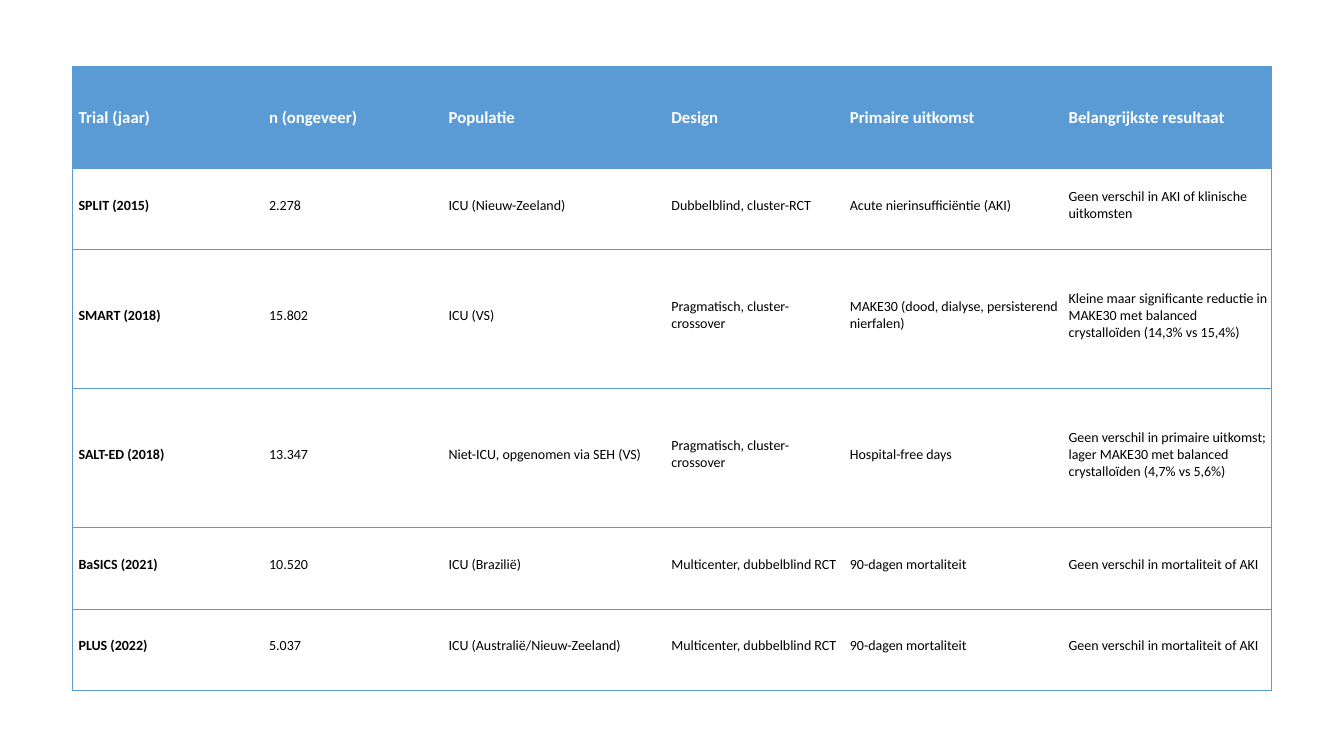
from lxml.etree import SubElement
from pptx import Presentation
from pptx.dml.color import RGBColor
from pptx.enum.text import MSO_ANCHOR
from pptx.oxml.ns import qn
from pptx.util import Inches, Pt

BLUE, WHITE, BLACK = "5B9BD5", "FFFFFF", "000000"
COLUMN_WIDTHS = [1.89, 1.78, 2.21, 1.77, 2.17, 2.07]
ROW_HEIGHTS = [1.01, 0.81, 1.38, 1.38, 0.81, 0.81]
TRIALS = [
    ["Trial (jaar)", "n (ongeveer)", "Populatie", "Design",
     "Primaire uitkomst", "Belangrijkste resultaat"],
    ["SPLIT (2015)", "2.278", "ICU (Nieuw-Zeeland)", "Dubbelblind, cluster-RCT",
     "Acute nierinsufficiëntie (AKI)",
     "Geen verschil in AKI of klinische uitkomsten"],
    ["SMART (2018)", "15.802", "ICU (VS)", "Pragmatisch, cluster-crossover",
     "MAKE30 (dood, dialyse, persisterend nierfalen)",
     "Kleine maar significante reductie in MAKE30 met balanced "
     "crystalloïden (14,3% vs 15,4%)"],
    ["SALT-ED (2018)", "13.347", "Niet-ICU, opgenomen via SEH (VS)",
     "Pragmatisch, cluster-crossover", "Hospital-free days",
     "Geen verschil in primaire uitkomst; lager MAKE30 met balanced "
     "crystalloïden (4,7% vs 5,6%)"],
    ["BaSICS (2021)", "10.520", "ICU (Brazilië)", "Multicenter, dubbelblind RCT",
     "90-dagen mortaliteit", "Geen verschil in mortaliteit of AKI"],
    ["PLUS (2022)", "5.037", "ICU (Australië/Nieuw-Zeeland)",
     "Multicenter, dubbelblind RCT", "90-dagen mortaliteit",
     "Geen verschil in mortaliteit of AKI"],
]


def color(value):
    """Turn a hex string into a colour."""
    return RGBColor.from_string(value)


def set_borders(cell, visible_sides):
    """Draw thin blue lines on the given sides and none on the others."""
    properties = cell._tc.get_or_add_tcPr()
    for side in "LRTB":
        line = SubElement(properties, qn(f"a:ln{side}"), w=str(Pt(0.5)))
        if side in visible_sides:
            fill = SubElement(line, qn("a:solidFill"))
            SubElement(fill, qn("a:srgbClr"), val=BLUE)
        else:
            SubElement(line, qn("a:noFill"))


def fill_cell(cell, text, is_header, is_bold):
    """Write and format the text of one cell."""
    cell.fill.solid()
    cell.fill.fore_color.rgb = color(BLUE if is_header else WHITE)
    cell.vertical_anchor = MSO_ANCHOR.MIDDLE
    cell.margin_left, cell.margin_right = Inches(0.06), Inches(0.04)
    cell.margin_top = Inches(0.09 if is_header else 0.02)
    cell.margin_bottom = Inches(0.09)
    cell.text = text
    font = cell.text_frame.paragraphs[0].font
    font.name = "Calibri"
    font.size = Pt(12 if is_header else 10)
    font.bold = is_bold
    font.color.rgb = color(WHITE if is_header else BLACK)


def add_trial_table(page, left, top, width, height):
    """Add the table of trials in the given box."""
    table = page.shapes.add_table(
        len(TRIALS), len(COLUMN_WIDTHS),
        Inches(left), Inches(top), Inches(width), Inches(height)).table
    table.horz_banding = False
    for column, share in zip(table.columns, COLUMN_WIDTHS):
        column.width = Inches(width * share / sum(COLUMN_WIDTHS))
    for row, share in zip(table.rows, ROW_HEIGHTS):
        row.height = Inches(height * share / sum(ROW_HEIGHTS))
    last_column = len(COLUMN_WIDTHS) - 1
    for row_index, trial in enumerate(TRIALS):
        for column_index, text in enumerate(trial):
            cell = table.cell(row_index, column_index)
            is_header, is_first = row_index == 0, column_index == 0
            sides = "TB" + "L" * is_first + "R" * (column_index == last_column)
            set_borders(cell, sides)
            fill_cell(cell, text, is_header, is_header or is_first)


def main():
    """Build and save the deck."""
    deck = Presentation()
    deck.slide_width, deck.slide_height = Inches(13.33), Inches(7.5)
    page = deck.slides.add_slide(deck.slide_layouts[6])
    add_trial_table(page, 0.72, 0.66, 11.89, 6.19)
    deck.save("out.pptx")


if __name__ == "__main__":
    main()
